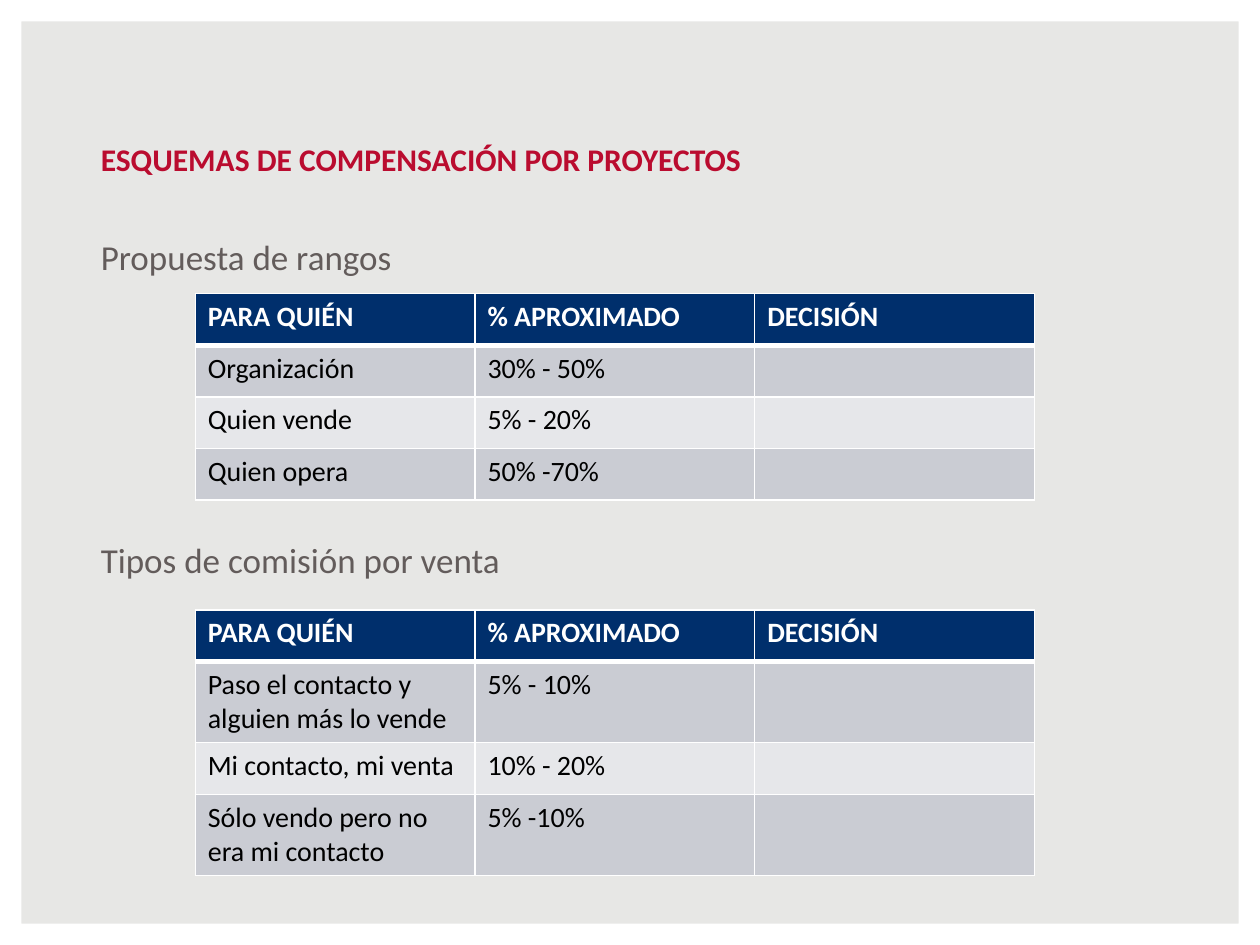
from lxml import etree
from pptx import Presentation
from pptx import util as u
from pptx.dml.color import RGBColor
from pptx.enum import shapes, text
from pptx.oxml.ns import qn

# Content
TITLE = "ESQUEMAS DE COMPENSACIÓN POR PROYECTOS"
HEADER = ("PARA QUIÉN", "% APROXIMADO", "DECISIÓN")
SECTIONS = [
    ("Propuesta de rangos", 2.33, [
        ("Organización", "30% - 50%", ""),
        ("Quien vende", "5% - 20%", ""),
        ("Quien opera", "50% -70%", ""),
    ]),
    ("Tipos de comisión por venta", 4.84, [
        ("Paso el contacto y alguien más lo vende", "5% - 10%", ""),
        ("Mi contacto, mi venta", "10% - 20%", ""),
        ("Sólo vendo pero no era mi contacto", "5% -10%", ""),
    ]),
]

# Layout, in inches unless noted
WIDTH, HEIGHT = 10, 7.5
MARGIN, FRAME = 0.75, 0.17
TABLE_LEFT, COLUMN, ROW = 1.55, 2.22, 0.41
SECTION_GAP = 149  # points between the two headings

# Formats
TITLE_FONT = {"size": 18, "bold": True, "color": "BA0C2F"}
HEADING_FONT = {"size": 20, "bold": False, "color": "635C5B"}
HEADER_FONT = {"size": 16, "bold": True, "color": "FFFFFF"}
CELL_FONT = {"size": 16, "bold": False, "color": "000000"}
NAVY, BANDS = "002F6C", ("E6E7EA", "CACCD3")


def color(value):
    return RGBColor.from_string(value)


def paint(fill, value):
    fill.solid()
    fill.fore_color.rgb = color(value)


def write(para, words, style):
    span = para.add_run()
    span.text = words
    span.font.name = "Calibri"
    span.font.size = u.Pt(style["size"])
    span.font.bold = style["bold"]
    span.font.color.rgb = color(style["color"])


def set_frame(box, anchor):
    frame = box.text_frame
    settings = {"word_wrap": True, "vertical_anchor": anchor,
                "auto_size": text.MSO_AUTO_SIZE.NONE}
    settings.update({f"margin_{side}": u.Inches(0.05)
                     for side in ("left", "top", "right", "bottom")})
    for name, value in settings.items():
        setattr(frame, name, value)
    return frame


def add_borders(cell, widths):
    properties = cell._tc.get_or_add_tcPr()
    for side, points in widths.items():
        line = etree.SubElement(properties, qn(f"a:ln{side}"), w=str(u.Pt(points)))
        fill = etree.SubElement(line, qn("a:solidFill"))
        etree.SubElement(fill, qn("a:srgbClr"), val="FFFFFF")


def add_table(page, top, rows):
    records = [HEADER] + rows
    table = page.shapes.add_table(
        len(records), len(HEADER), u.Inches(TABLE_LEFT), u.Inches(top),
        u.Inches(COLUMN * len(HEADER)), u.Inches(ROW * len(records))).table
    for column in table.columns:
        column.width = u.Inches(COLUMN)
    for i, record in enumerate(records):
        table.rows[i].height = u.Inches(ROW)
        # A thick rule separates the header from the first row
        borders = {"L": 1, "R": 1, "T": 3 if i == 1 else 1, "B": 3 if i == 0 else 1}
        for j, words in enumerate(record):
            cell = table.cell(i, j)
            add_borders(cell, borders)
            paint(cell.fill, BANDS[i % 2] if i else NAVY)
            if words:
                write(cell.text_frame.paragraphs[0], words,
                      CELL_FONT if i else HEADER_FONT)


def main():
    deck = Presentation()
    deck.slide_width, deck.slide_height = u.Inches(WIDTH), u.Inches(HEIGHT)
    page = deck.slides.add_slide(deck.slide_layouts[5])
    paint(page.background.fill, "E7E7E5")

    # White frame around the slide
    border = page.shapes.add_shape(shapes.MSO_SHAPE.FRAME, 0, 0,
                                   deck.slide_width, deck.slide_height)
    border.adjustments[0] = FRAME / HEIGHT
    border.shadow.inherit = False
    paint(border.fill, "FFFFFF")
    border.line.fill.background()

    # Title
    title = page.shapes.title
    place = {"left": MARGIN, "top": 1.04, "width": WIDTH - 2 * MARGIN, "height": 0.42}
    for name, value in place.items():
        setattr(title, name, u.Inches(value))
    para = set_frame(title, text.MSO_ANCHOR.BOTTOM).paragraphs[0]
    para.alignment = text.PP_ALIGN.LEFT
    write(para, TITLE, TITLE_FONT)

    # Section headings share one box
    box = page.shapes.add_textbox(u.Inches(MARGIN), u.Inches(1.82),
                                  u.Inches(WIDTH - 2 * MARGIN), u.Inches(4.97))
    frame = set_frame(box, text.MSO_ANCHOR.TOP)
    for i, (heading, top, rows) in enumerate(SECTIONS):
        para = frame.add_paragraph() if i else frame.paragraphs[0]
        para.space_before = u.Pt(SECTION_GAP * i)
        write(para, heading, HEADING_FONT)
        add_table(page, top, rows)

    deck.save("out.pptx")


if __name__ == "__main__":
    main()
